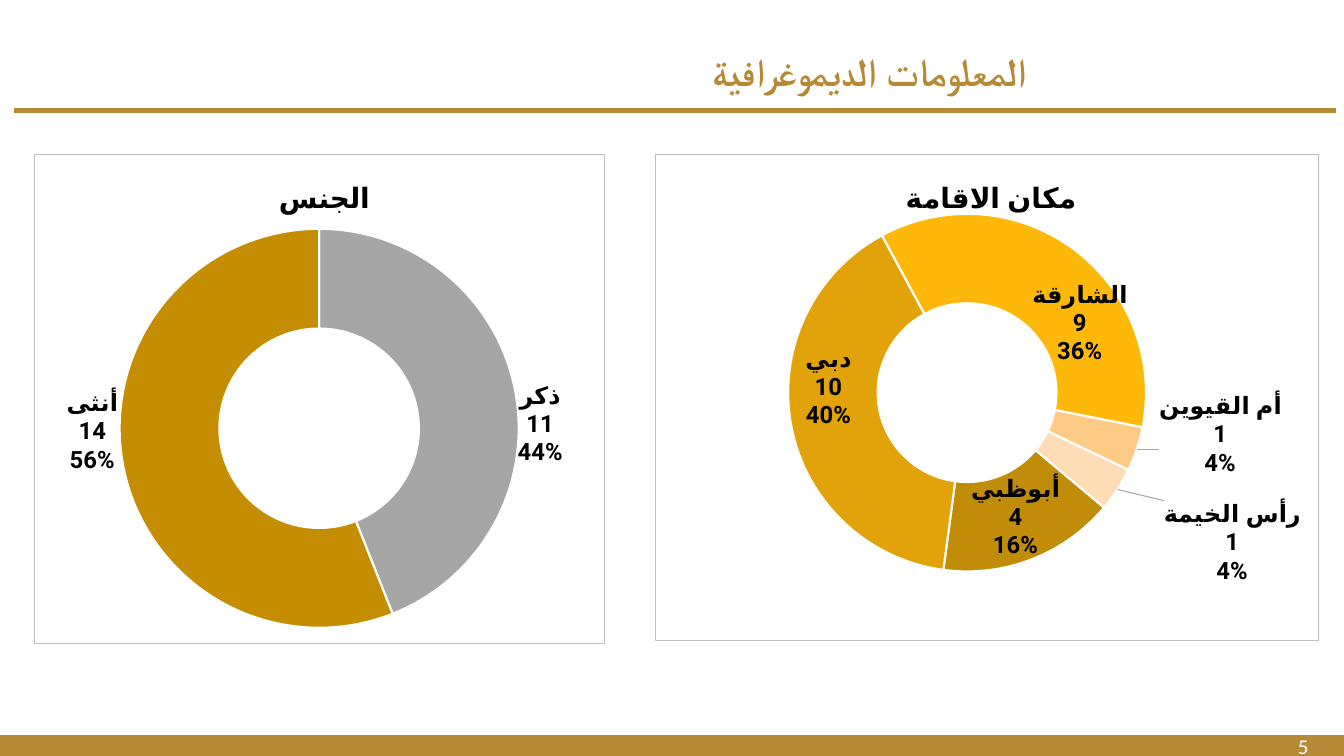
from lxml import etree
from pptx import Presentation
from pptx.chart.data import CategoryChartData
from pptx.dml.color import RGBColor
from pptx.enum.chart import XL_CHART_TYPE
from pptx.enum.shapes import MSO_CONNECTOR, MSO_SHAPE
from pptx.enum.text import MSO_ANCHOR, PP_ALIGN
from pptx.oxml import parse_xml
from pptx.oxml.ns import nsdecls, qn
from pptx.util import Pt

DOUGHNUT = XL_CHART_TYPE.DOUGHNUT
RECTANGLE = MSO_SHAPE.RECTANGLE
STRAIGHT = MSO_CONNECTOR.STRAIGHT
MIDDLE = MSO_ANCHOR.MIDDLE
CENTER = PP_ALIGN.CENTER

GOLD = RGBColor(0xB6, 0x8A, 0x35)
WHITE = RGBColor(0xFF, 0xFF, 0xFF)
BLACK = RGBColor(0x00, 0x00, 0x00)
BORDER = RGBColor(0xBF, 0xBF, 0xBF)
LEADER = RGBColor(0xA6, 0xA6, 0xA6)
GREY = RGBColor(0xA6, 0xA6, 0xA6)
DARK_GOLD = RGBColor(0xC5, 0x8D, 0x01)
BRONZE = RGBColor(0xC1, 0x8C, 0x08)
OCHRE = RGBColor(0xE1, 0xA3, 0x09)
AMBER = RGBColor(0xFE, 0xB8, 0x0A)
PEACH = RGBColor(0xFE, 0xCB, 0x87)
CREAM = RGBColor(0xFE, 0xDC, 0xB6)

FONT = "Roboto"
NUMBER_FONT = "Calibri"
PAGE_WIDTH, PAGE_HEIGHT = 960, 540

# Each slice: name, count, colour, label offset as a share of the chart box
GENDER = [
    ("ذكر", 11, GREY, (0.13, 0.05)),
    ("أنثى", 14, DARK_GOLD, (-0.14, -0.05)),
]
RESIDENCE = [
    ("أبوظبي", 4, BRONZE, (0, 0)),
    ("دبي", 10, OCHRE, (-0.01, -0.06)),
    ("الشارقة", 9, AMBER, (0.05, 0.08)),
    ("أم القيوين", 1, PEACH, (0.19, 0)),
    ("رأس الخيمة", 1, CREAM, (0.23, 0.16)),
]


def style_font(font, size, color, name=FONT, bold=True):
    font.size, font.bold, font.name = Pt(size), bold, name
    font.color.rgb = color


def add_complex_fonts(element):
    """Give Arabic letters the same typeface as Latin ones."""
    for latin in list(element.iter(qn("a:latin"))):
        complex_font = etree.Element(qn("a:cs"), typeface=latin.get("typeface"))
        latin.addnext(complex_font)


def set_layout(parent, index, **values):
    for old in parent.findall(qn("c:layout")):
        parent.remove(old)
    layout = etree.Element(qn("c:layout"))
    manual = etree.SubElement(layout, qn("c:manualLayout"))
    for tag, value in values.items():
        etree.SubElement(manual, qn("c:" + tag)).set("val", str(value))
    parent.insert(index, layout)


def line_properties(color, width):
    return parse_xml(
        f'<c:spPr {nsdecls("c", "a")}><a:noFill/><a:ln w="{Pt(width)}"><a:solidFill>'
        f'<a:srgbClr val="{color}"/></a:solidFill></a:ln></c:spPr>')


def show_parts(labels):
    """Show category, value and percentage on separate lines."""
    for part in ("showVal", "showCatName", "showPercent"):
        labels.find(qn("c:" + part)).set("val", "1")
    separator = etree.Element(qn("c:separator"))
    separator.text = "\n"
    labels.find(qn("c:showBubbleSize")).addnext(separator)


def add_labels(series, slices):
    style_font(series.data_labels.font, 17, BLACK)
    for index, (_, _, color, (right, down)) in enumerate(slices):
        point = series.points[index]
        point.format.fill.solid()
        point.format.fill.fore_color.rgb = color
        point.format.line.color.rgb = WHITE
        point.format.line.width = Pt(1.5)
        style_font(point.data_label.font, 17, BLACK)
    labels = series._element.find(qn("c:dLbls"))
    for label, item in zip(labels.findall(qn("c:dLbl")), slices):
        right, down = item[3]
        if right or down:
            set_layout(label, 1, x=right, y=down)
        show_parts(label)
    show_parts(labels)

    # Leader lines to the labels outside the ring
    for old in labels.findall(qn("c:showLeaderLines")):
        labels.remove(old)
    etree.SubElement(labels, qn("c:showLeaderLines")).set("val", "1")
    leader = etree.SubElement(labels, qn("c:leaderLines"))
    leader.append(line_properties(LEADER, 0.75))


def add_doughnut(page, box, title, title_left, slices, plot, start):
    data = CategoryChartData()
    data.categories = [item[0] for item in slices]
    data.add_series("Series 1", [item[1] for item in slices])
    chart = page.shapes.add_chart(DOUGHNUT, *map(Pt, box), data).chart
    style_font(chart.font, 18, BLACK)
    chart.has_legend = False

    # Chart title
    chart.has_title = True
    span = chart.chart_title.text_frame.paragraphs[0].add_run()
    span.text = title
    style_font(span.font, 20, BLACK)
    set_layout(chart.chart_title._element, 1, xMode="edge", yMode="edge",
               x=title_left, y=0.04)

    # Ring
    ring = chart.plots[0]
    ring.vary_by_categories = True
    ring._element.find(qn("c:firstSliceAng")).set("val", str(start))
    ring._element.find(qn("c:holeSize")).set("val", "55")
    add_labels(ring.series[0], slices)
    left, top, width, height = plot
    space = chart._chartSpace
    set_layout(space.find(".//" + qn("c:plotArea")), 0, layoutTarget="inner",
               xMode="edge", yMode="edge", x=left, y=top, w=width, h=height)

    # Frame
    space.find(qn("c:chart")).addnext(line_properties(BORDER, 0.75))
    add_complex_fonts(space)


def add_heading(page, box, text):
    title = page.shapes.title
    title.left, title.top, title.width, title.height = map(Pt, box)
    frame = title.text_frame
    frame.word_wrap = True
    frame.vertical_anchor = MIDDLE
    para = frame.paragraphs[0]
    para.alignment = CENTER
    para._p.get_or_add_pPr().set("rtl", "1")
    span = para.add_run()
    span.text = text
    style_font(span.font, 28, GOLD)
    add_complex_fonts(para._p)


def add_rule(page, left, right, top):
    rule = page.shapes.add_connector(STRAIGHT, Pt(left), Pt(top), Pt(right), Pt(top))
    rule.line.color.rgb = GOLD
    rule.line.width = Pt(3)
    etree.SubElement(rule._element.spPr, qn("a:effectLst"))


def add_footer(page, box, number):
    left, top, width, height = box
    bar = page.shapes.add_shape(RECTANGLE, *map(Pt, box))
    bar.shadow.inherit = False
    bar.fill.solid()
    bar.fill.fore_color.rgb = GOLD
    bar.line.fill.background()

    # Page number
    label = page.shapes.add_textbox(Pt(left + width - 40), Pt(top - 4.4), Pt(40), Pt(19))
    label.text_frame.word_wrap = True
    span = label.text_frame.paragraphs[0].add_run()
    span.text = number
    style_font(span.font, 15, WHITE, NUMBER_FONT, False)


def main():
    deck = Presentation()
    deck.slide_width, deck.slide_height = Pt(PAGE_WIDTH), Pt(PAGE_HEIGHT)
    page = deck.slides.add_slide(deck.slide_layouts[5])
    add_footer(page, (0, 525, PAGE_WIDTH, 15), "5")
    add_rule(page, 10, 954, 79)
    add_heading(page, (390, 30, 462, 41), "المعلومات الديموغرافية")
    add_doughnut(page, (24, 110, 408, 350), "الجنس", 0.42, GENDER,
                 (0.15, 0.15, 0.7, 0.82), 0)
    add_doughnut(page, (468, 110, 474, 348), "مكان الاقامة", 0.37, RESIDENCE,
                 (0.2, 0.12, 0.54, 0.74), 130)
    deck.save("out.pptx")


if __name__ == "__main__":
    main()
